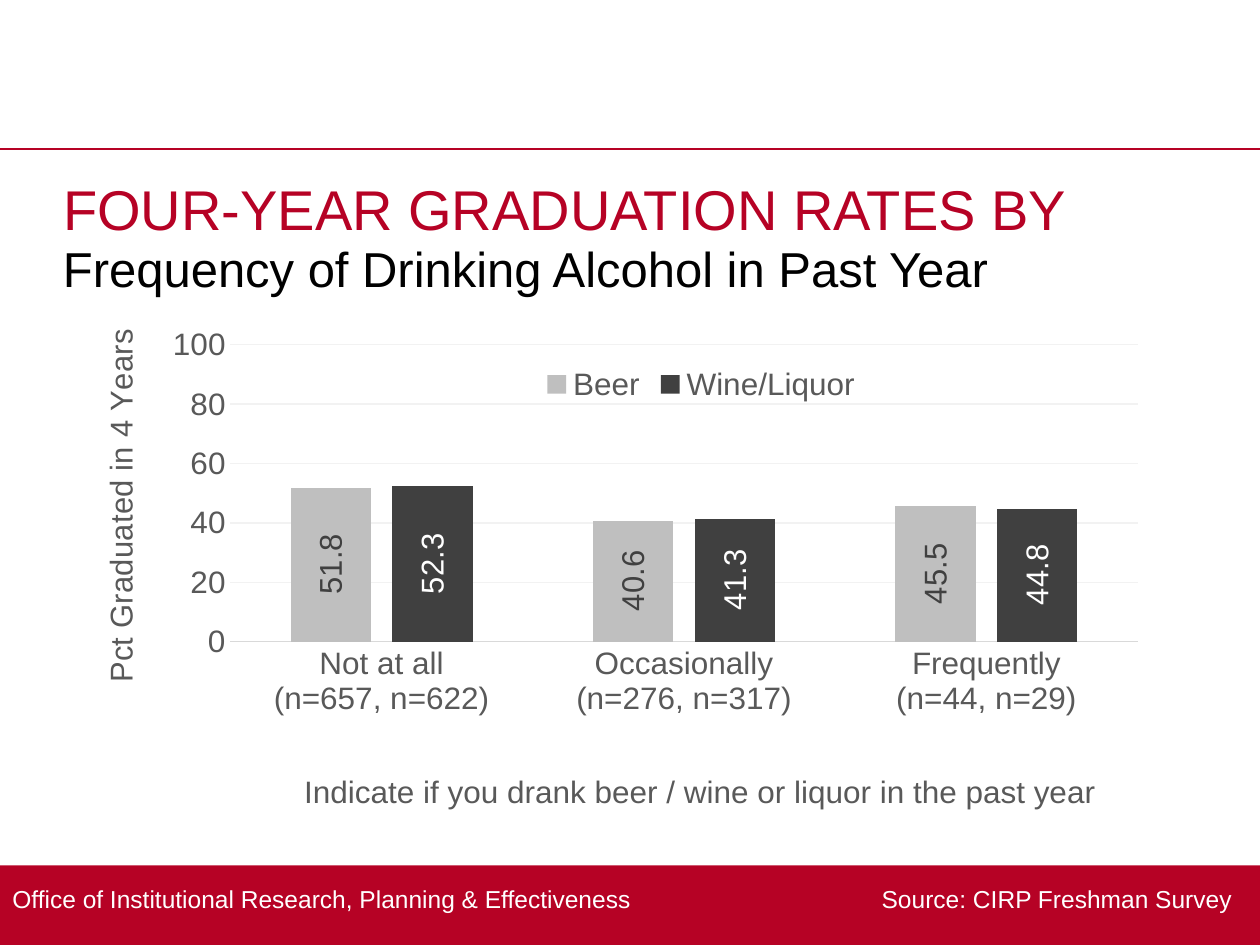
from lxml import etree
from pptx import Presentation
from pptx.chart.data import CategoryChartData
from pptx.dml.color import RGBColor
from pptx.enum import chart as charts, shapes, text
from pptx.oxml.ns import qn
from pptx.util import Pt

COLORS = {"red": "B60225", "white": "FFFFFF", "black": "000000", "gray": "595959",
          "axis": "D9D9D9", "grid": "F2F2F2", "light": "BFBFBF", "dark": "404040"}
FONT = "Arial"
TITLE = "FOUR-YEAR GRADUATION RATES BY"
SUBTITLE = "Frequency of Drinking Alcohol in Past Year"
FOOTER = ("Office of Institutional Research, Planning & Effectiveness"
          "\tSource: CIRP Freshman Survey")
CATEGORIES = ["Not at all\n(n=657, n=622)", "Occasionally\n(n=276, n=317)",
              "Frequently\n(n=44, n=29)"]
SERIES = [("Beer", [51.8, 40.6, 45.5], "light", "dark"),
          ("Wine/Liquor", [52.3, 41.3, 44.8], "dark", "white")]
CATEGORY_TITLE = "Indicate if you drank beer / wine or liquor in the past year"
VALUE_TITLE = "Pct Graduated in 4 Years"
UPRIGHT = "-5400000"


def rgb(name):
    return RGBColor.from_string(COLORS[name])


def style(font, size, color):
    font.name, font.size, font.bold = FONT, Pt(size), False
    font.color.rgb = rgb(color)


def write(box, words, size, color, anchor, margins):
    frame = box.text_frame
    frame.word_wrap = True
    frame.auto_size = text.MSO_AUTO_SIZE.NONE
    frame.vertical_anchor = anchor
    frame.margin_left = frame.margin_right = Pt(margins[0])
    frame.margin_top = frame.margin_bottom = Pt(margins[1])
    frame.text = words
    para = frame.paragraphs[0]
    para.alignment = text.PP_ALIGN.LEFT
    para.space_before = Pt(0)
    for span in para.runs:
        style(span.font, size, color)
    return para


def place(element, index, inner=False, **fractions):
    layout = element.find(qn("c:layout"))
    if layout is None:
        layout = etree.Element(qn("c:layout"))
        element.insert(index, layout)
    manual = etree.SubElement(layout, qn("c:manualLayout"))
    settings = [("layoutTarget", "inner")] if inner else []
    settings += [("xMode", "edge"), ("yMode", "edge"), *fractions.items()]
    for tag, value in settings:
        etree.SubElement(manual, qn("c:" + tag)).set("val", str(value))


def title_axis(axis, words, x, y):
    frame = axis.axis_title.text_frame
    frame.text = words
    style(frame.paragraphs[0].runs[0].font, 18, "gray")
    place(axis.axis_title._element, 1, x=x, y=y)
    axis.major_tick_mark = axis.minor_tick_mark = charts.XL_TICK_MARK.NONE
    style(axis.tick_labels.font, 18, "gray")
    return frame


def add_rates_chart(page):
    data = CategoryChartData(number_format="0.0")
    data.categories = CATEGORIES
    for name, values, _, _ in SERIES:
        data.add_series(name, values)
    chart = page.shapes.add_chart(charts.XL_CHART_TYPE.COLUMN_CLUSTERED,
                                  Pt(34.5), Pt(180), Pt(648), Pt(288), data).chart
    style(chart.font, 18, "black")
    chart.has_title = False
    place(chart._chartSpace.chart.plotArea, 0, True, x=0.15, y=0.06, w=0.8, h=0.6)

    chart.has_legend = True
    legend = chart.legend
    legend.position = charts.XL_LEGEND_POSITION.TOP
    legend.include_in_layout = False
    style(legend.font, 18, "gray")
    place(legend._element, 1, x=0.42, y=0.1, w=0.29, h=0.08)

    title_axis(chart.category_axis, CATEGORY_TITLE, 0.21, 0.91)
    chart.category_axis.format.line.color.rgb = rgb("axis")
    chart.category_axis.format.line.width = Pt(0.75)

    values = chart.value_axis
    frame = title_axis(values, VALUE_TITLE, 0.03, 0.03)
    frame._txBody.find(qn("a:bodyPr")).set("rot", UPRIGHT)
    values.minimum_scale, values.maximum_scale, values.major_unit = 0, 100, 20
    values.tick_labels.number_format = "0"
    values.tick_labels.number_format_is_linked = False
    values.format.line.fill.background()
    values.major_gridlines.format.line.color.rgb = rgb("grid")
    values.major_gridlines.format.line.width = Pt(0.75)

    plot = chart.plots[0]
    plot.gap_width, plot.overlap, plot.vary_by_categories = 150, -27, False
    for series, (_, _, fill, label_color) in zip(plot.series, SERIES):
        series.format.fill.solid()
        series.format.fill.fore_color.rgb = rgb(fill)
        labels = series.data_labels
        labels.show_value = True
        labels.position = charts.XL_LABEL_POSITION.CENTER
        labels.number_format = "#,##0.0"
        labels.number_format_is_linked = False
        style(labels.font, 18, label_color)
        body = labels._element.find(qn("c:txPr")).find(qn("a:bodyPr"))
        body.set("rot", UPRIGHT)
        body.set("vert", "horz")


def main():
    deck = Presentation()
    deck.slide_width, deck.slide_height = Pt(720), Pt(540)
    page = deck.slides.add_slide(deck.slide_layouts[5])

    band = page.shapes.add_shape(shapes.MSO_SHAPE.RECTANGLE,
                                 Pt(0), Pt(494.5), Pt(720), Pt(45.5))
    band.shadow.inherit = False
    band.fill.solid()
    band.fill.fore_color.rgb = rgb("red")
    band.line.fill.background()

    rule = page.shapes.add_connector(shapes.MSO_CONNECTOR.STRAIGHT,
                                     Pt(0), Pt(85.2), Pt(720), Pt(85.2))
    rule.line.color.rgb = rgb("red")
    rule.line.width = Pt(1)
    etree.SubElement(rule._element.spPr, qn("a:effectLst"))

    footer = page.shapes.add_textbox(Pt(0), Pt(495.5), Pt(720), Pt(36.5))
    para = write(footer, FOOTER, 14, "white", text.MSO_ANCHOR.MIDDLE, (7.2, 3.6))
    tabs = etree.SubElement(para._p.get_or_add_pPr(), qn("a:tabLst"))
    tab = etree.SubElement(tabs, qn("a:tab"))
    tab.set("pos", str(Pt(697)))
    tab.set("algn", "r")

    subtitle = page.shapes.add_textbox(Pt(36), Pt(136), Pt(648), Pt(32.5))
    write(subtitle, SUBTITLE, 28, "black", text.MSO_ANCHOR.TOP, (0, 0))

    title = page.shapes.title
    title.left, title.top, title.width, title.height = Pt(36), Pt(96), Pt(648), Pt(60)
    write(title, TITLE, 32, "red", text.MSO_ANCHOR.TOP, (0, 3.6))

    add_rates_chart(page)
    deck.save("out.pptx")


if __name__ == "__main__":
    main()
